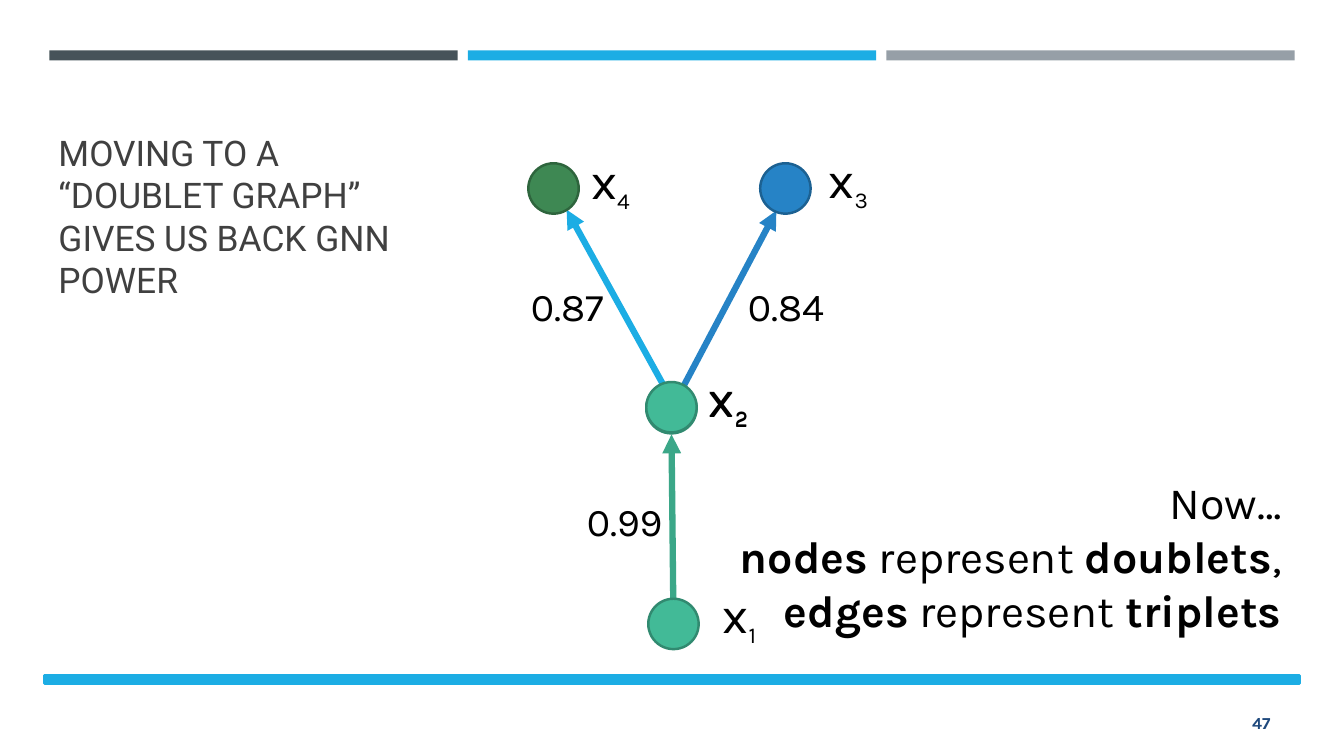
from lxml.etree import SubElement
from pptx import Presentation
from pptx.dml.color import RGBColor
from pptx.enum.shapes import MSO_CONNECTOR as Connector, MSO_SHAPE as Shape
from pptx.enum.text import MSO_ANCHOR as Anchor, MSO_AUTO_SIZE as AutoSize, PP_ALIGN as Align
from pptx.oxml.ns import qn
from pptx.util import Pt

SCALE = 9144  # EMU per px, 100 px to the inch
COLORS = {
    "slate": "465359", "cyan": "1CADE4", "gray": "969FA7",
    "blue": "2683C6", "blue edge": "1C6192",
    "green": "3E8853", "green edge": "2E653D",
    "mint": "42BA97", "mint edge": "318A70", "mint arrow": "3BA788",
    "title": "404040", "navy": "1F497D", "black": "000000",
}


def px(*lengths):
    return [length * SCALE for length in lengths]


def color(name):
    return RGBColor.from_string(COLORS[name])


class SlideBuilder:
    def __init__(self, deck):
        self.body_font = "Karla"
        self.title_font = "Roboto"
        self.page = deck.slides.add_slide(deck.slide_layouts[5])

    def shape(self, kind, bounds, fill, line=None):
        shape = self.page.shapes.add_shape(kind, *px(*bounds))
        shape.shadow.inherit = False
        shape.fill.solid()
        shape.fill.fore_color.rgb = color(fill)
        if line:
            shape.line.color.rgb = color(line)
            shape.line.width = Pt(1.75)
        else:
            shape.line.fill.background()

    def arrow(self, start, end, stroke):
        arrow = self.page.shapes.add_connector(Connector.STRAIGHT, *px(*start, *end))
        arrow.line.color.rgb = color(stroke)
        arrow.line.width = Pt(4.5)
        SubElement(arrow.line._get_or_add_ln(), qn("a:tailEnd"), type="triangle")
        SubElement(arrow._element.spPr, qn("a:effectLst"))

    def span(self, para, text, size, ink="black", font=None, bold=False):
        span = para.add_run()
        span.text = text
        span.font.name = font or self.body_font
        span.font.size = Pt(size)
        span.font.bold = bold
        span.font.color.rgb = color(ink)
        return span

    def title(self, bounds, text):
        box = self.page.shapes.title
        box.left, box.top, box.width, box.height = px(*bounds)
        frame = box.text_frame
        frame.word_wrap = True
        frame.auto_size = AutoSize.NONE
        frame.vertical_anchor = Anchor.BOTTOM
        para = frame.paragraphs[0]
        para.alignment = Align.LEFT
        para.line_spacing = Pt(30.2)
        self.span(para, text, 25.2, "title", self.title_font)

    def text_box(self, bounds, align, anchor=Anchor.TOP, grow=True):
        frame = self.page.shapes.add_textbox(*px(*bounds)).text_frame
        frame.word_wrap = True
        frame.auto_size = AutoSize.SHAPE_TO_FIT_TEXT if grow else AutoSize.NONE
        frame.vertical_anchor = anchor
        frame.paragraphs[0].alignment = align
        return frame

    def weight(self, left, top, text):
        frame = self.text_box((left, top, 125, 57), Align.CENTER)
        self.span(frame.paragraphs[0], text, 28)

    def node(self, center, fill, label_at, index):
        x, y = center
        self.shape(Shape.OVAL, (x - 25, y - 25, 50, 50), fill, f"{fill} edge")
        para = self.text_box((*label_at, 125, 71), Align.CENTER).paragraphs[0]
        self.span(para, "x", 36)
        subscript = self.span(para, index, 28)
        subscript.font._element.set("baseline", "-25000")

    def statement(self, bounds, lines):
        """Write right-aligned lines, each a list of (text, bold) pairs."""
        frame = self.text_box(bounds, Align.RIGHT)
        for number, line in enumerate(lines):
            para = frame.add_paragraph() if number else frame.paragraphs[0]
            para.alignment = Align.RIGHT
            for text, bold in line:
                self.span(para, text, 32, bold=bold)

    def page_number(self, bounds, text):
        frame = self.text_box(bounds, Align.RIGHT, Anchor.MIDDLE, grow=False)
        self.span(frame.paragraphs[0], text, 12, "navy", bold=True)


def main():
    deck = Presentation()
    deck.slide_width, deck.slide_height = px(1333, 750)
    slide = SlideBuilder(deck)

    for column, fill in enumerate(("slate", "cyan", "gray")):
        slide.shape(Shape.RECTANGLE, (49 + 415 * column, 50, 405, 10), fill)
    slide.shape(Shape.RECTANGLE, (44, 670, 1245, 8), "cyan", "cyan")

    slide.title((48, 158, 375, 145), "MOVING TO A “DOUBLET GRAPH” GIVES US BACK GNN POWER")

    slide.arrow((669, 402), (562, 208), "cyan")
    slide.arrow((669, 400), (770, 209), "blue")
    slide.arrow((668, 619), (666, 431), "mint arrow")

    for center, fill, label_at, index in (
        ((668, 619), "mint", (671, 574), "1"),
        ((549, 187), "green", (543, 143), "4"),
        ((779, 187), "blue", (779, 142), "3"),
        ((666, 405), "mint", (660, 359), "2"),
        ((666, 404), "mint", (660, 358), "2"),
    ):
        slide.node(center, fill, label_at, index)

    for left, top, text in ((557, 488, "0.99"), (500, 275, "0.87"), (717, 275, "0.84")):
        slide.weight(left, top, text)

    slide.statement((707, 466, 574, 172), (
        [("Now…", False)],
        [("nodes", True), (" represent ", False), ("doublets", True), (",", False)],
        [("edges", True), (" represent ", False), ("triplets", True)],
    ))
    slide.page_number((1155, 697, 115, 40), "47")
    deck.save("out.pptx")


if __name__ == "__main__":
    main()
